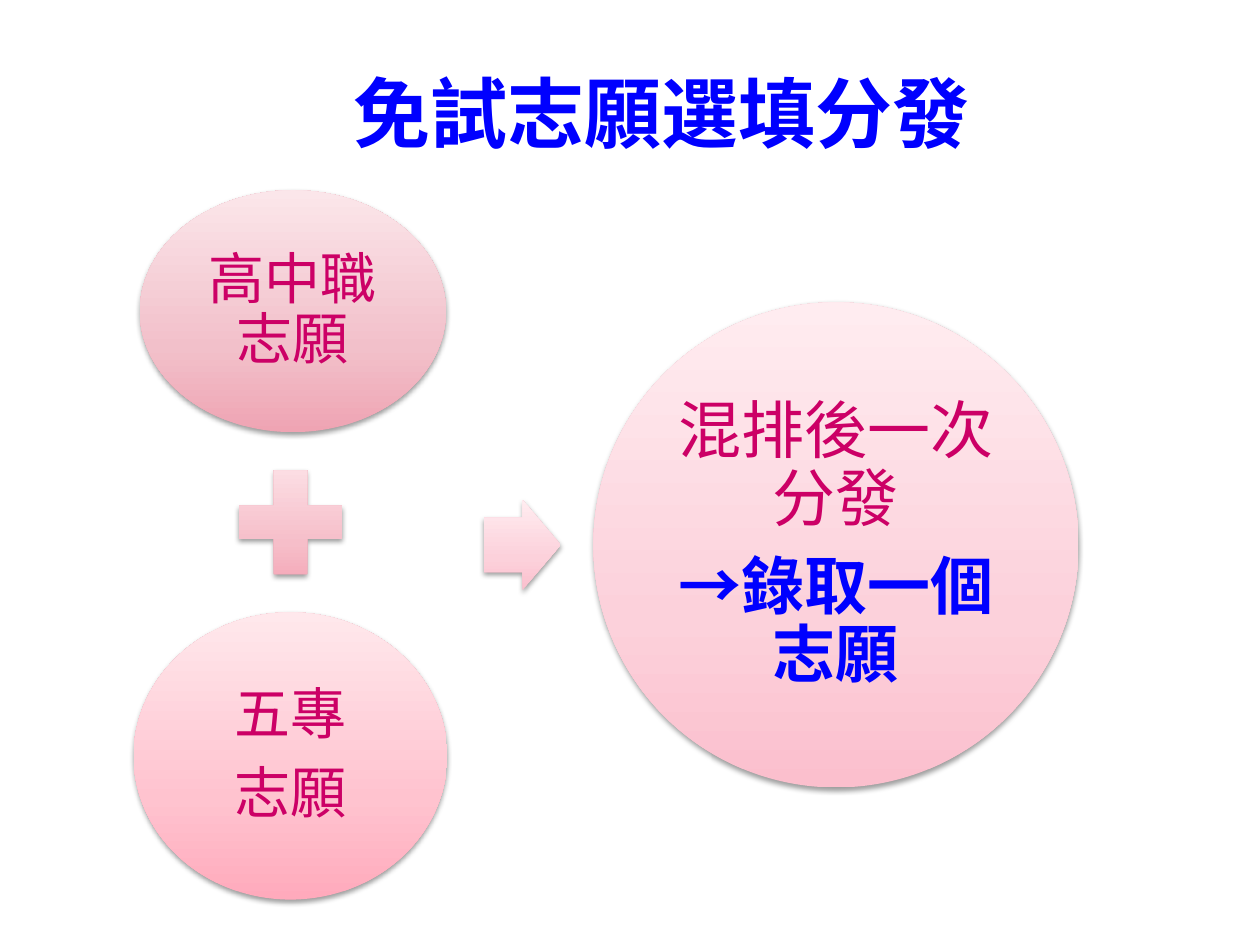
from dataclasses import dataclass

import pptx
import pptx.dml.color
import pptx.enum.shapes
import pptx.enum.text
import pptx.oxml
import pptx.oxml.ns
import pptx.util
from pptx.util import Inches

SHAPE = pptx.enum.shapes.MSO_SHAPE
NS = pptx.oxml.ns.nsdecls("a")


@dataclass(frozen=True)
class Theme:
    blue: str = "0000FF"
    magenta: str = "CC0066"
    # Gradient colours run from the bottom of a shape to its top.
    rose: tuple = ("EFA4B3", "F2C0CA", "FBE6EA")
    plus: tuple = ("F4A1B3", "F6BEC9", "FDE5EA")
    pink: tuple = ("FFAABC", "FFC3CF", "FFE8EC")
    pale: tuple = ("FBBFCD", "FCD1DB", "FFECF0")
    stops: tuple = (0, 35, 100)
    latin_font: str = "Arial"
    cjk_font: str = "Noto Sans CJK SC"
    title_size: int = 44
    result_size: int = 36
    choice_size: int = 32


THEME = Theme()


def style_paragraph(paragraph, size, font_name, color, bold=False):
    paragraph.alignment = pptx.enum.text.PP_ALIGN.CENTER
    for run in paragraph.runs:
        font = run.font
        font.size = pptx.util.Pt(size)
        font.bold = bold
        font.color.rgb = pptx.dml.color.RGBColor.from_string(color)
        font.name = font_name
        east_asian = pptx.oxml.parse_xml(f'<a:ea {NS} typeface="{font_name}"/>')
        run._r.rPr.find(pptx.oxml.ns.qn("a:latin")).addnext(east_asian)


def add_glossy_shape(slide, kind, box, colors):
    """Add an outline-free shape with a vertical gradient and a soft shadow below."""
    shape = slide.shapes.add_shape(kind, *map(Inches, box))
    shape.fill.gradient()
    shape.fill.gradient_angle = 90
    stop_list = shape._element.spPr.find(".//" + pptx.oxml.ns.qn("a:gsLst"))
    for stop in list(stop_list):
        stop_list.remove(stop)
    for position, color in zip(THEME.stops, colors):
        stop_list.append(pptx.oxml.parse_xml(
            f'<a:gs {NS} pos="{position * 1000}"><a:srgbClr val="{color}"/></a:gs>'))
    shape.line.fill.background()
    shape.shadow.inherit = False
    effects = shape._element.spPr.find(pptx.oxml.ns.qn("a:effectLst"))
    effects.append(pptx.oxml.parse_xml(
        f'<a:outerShdw {NS} blurRad="{pptx.util.Pt(3.1)}" dist="{pptx.util.Pt(1.6)}" '
        'dir="5400000" rotWithShape="0"><a:srgbClr val="000000">'
        '<a:alpha val="38000"/></a:srgbClr></a:outerShdw>'))
    return shape


def add_circle(slide, box, colors, lines, size, font_name, inset):
    """Add an ellipse whose lines are (text, colour, bold) paragraphs."""
    circle = add_glossy_shape(slide, SHAPE.OVAL, box, colors)
    frame = circle.text_frame
    frame.word_wrap = True
    frame.vertical_anchor = pptx.enum.text.MSO_ANCHOR.MIDDLE
    frame.margin_left = frame.margin_right = Inches(inset)
    frame.margin_top = frame.margin_bottom = Inches(inset)
    frame.text = "\n".join(text for text, _, _ in lines)
    for paragraph, (_, color, bold) in zip(frame.paragraphs, lines):
        paragraph.line_spacing = 0.9
        paragraph.space_after = pptx.util.Pt(round(size * 0.32, 1))
        style_paragraph(paragraph, size, font_name, color, bold)


def add_title(slide, box):
    frame = slide.shapes.add_textbox(*map(Inches, box)).text_frame
    frame.word_wrap = True
    frame.vertical_anchor = pptx.enum.text.MSO_ANCHOR.MIDDLE
    frame.text = "免試志願選填分發"
    style_paragraph(frame.paragraphs[0], THEME.title_size, THEME.cjk_font,
                    THEME.blue, bold=True)


def add_choices(slide, box):
    """Stack the two kinds of choice with a plus sign between them."""
    left, top, width, height = box
    school_height, plus_size, college_height = 1.92, 1.12, 2.28
    gap = (height - school_height - plus_size - college_height) / 2
    plus_top = top + school_height + gap
    choices = (
        ((left + 0.05, top, 2.43, school_height), THEME.rose, ["高中職志願"]),
        ((left, plus_top + plus_size + gap, width, college_height),
         THEME.pink, ["五專", "志願"]),
    )
    for circle_box, colors, texts in choices:
        lines = [(text, THEME.magenta, False) for text in texts]
        add_circle(slide, circle_box, colors, lines,
                   THEME.choice_size, THEME.latin_font, inset=0.04)
    plus_left = left + (width - plus_size) / 2
    add_glossy_shape(slide, SHAPE.MATH_PLUS,
                     (plus_left, plus_top, plus_size, plus_size), THEME.plus)


def add_result(slide, box):
    """Place an arrow at the left edge and the outcome circle at the right."""
    left, top, width, diameter = box
    arrow_height = 0.72
    arrow_top = top + (diameter - arrow_height) / 2
    arrow = add_glossy_shape(slide, SHAPE.RIGHT_ARROW,
                             (left, arrow_top, 0.61, arrow_height), THEME.pale)
    arrow.adjustments[0] = 0.6
    lines = [("混排後一次分發", THEME.magenta, False),
             ("→錄取一個志願", THEME.blue, True)]
    add_circle(slide, (left + width - diameter, top, diameter, diameter), THEME.pale,
               lines, THEME.result_size, THEME.cjk_font, inset=0.05)


def main():
    deck = pptx.Presentation()
    deck.slide_width, deck.slide_height = Inches(10), Inches(7.5)
    slide = deck.slides.add_slide(deck.slide_layouts[6])
    add_choices(slide, (1.06, 1.51, 2.49, 5.63))
    add_result(slide, (3.84, 2.4, 4.72, 3.85))
    add_title(slide, (1, 0.26, 8.5, 1.25))
    deck.save("out.pptx")


if __name__ == "__main__":
    main()
